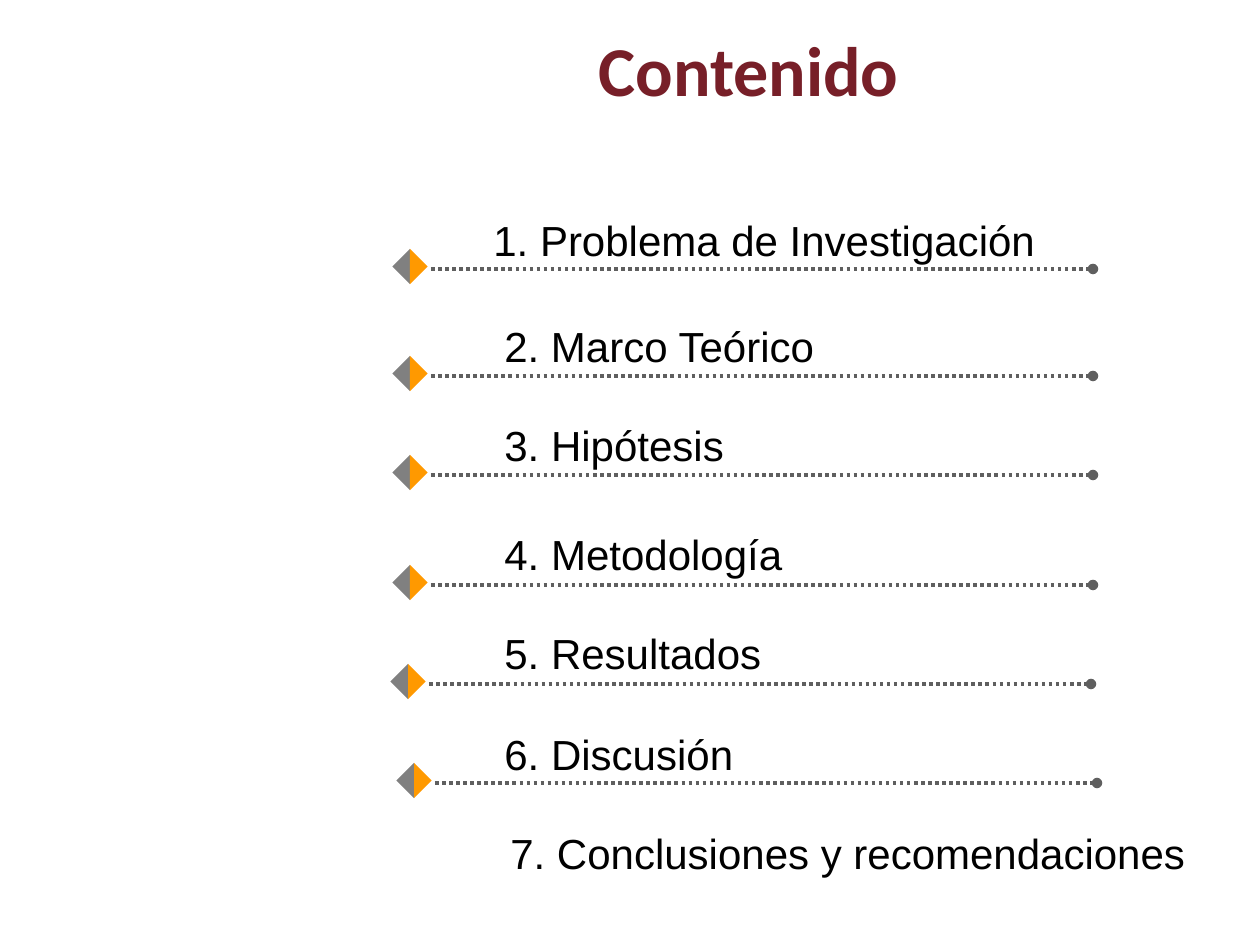
import pptx
import pptx.util
import pptx.dml.color
import pptx.enum.dml
import pptx.enum.shapes
import pptx.enum.text
import pptx.oxml.ns
from lxml import etree

RGB = pptx.dml.color.RGBColor
WINE = RGB(0x77, 0x1F, 0x28)
BLACK = RGB(0x00, 0x00, 0x00)
SLATE = RGB(0x5F, 0x5F, 0x5F)
GRAY = RGB(0x80, 0x80, 0x80)
ORANGE = RGB(0xFF, 0x99, 0x00)
ALIGN = pptx.enum.text.PP_ALIGN
KIND = pptx.enum.shapes.MSO_SHAPE.RIGHT_TRIANGLE
STRAIGHT = pptx.enum.shapes.MSO_CONNECTOR.STRAIGHT


def px(n):
    return round(n * 914400 / 126)


def write(text, x, y, w, h, font="Arial", size=24, color=BLACK, bold=False, align=ALIGN.LEFT):
    box = slide.shapes.add_textbox(px(x), px(y), px(w), px(h))
    box.text_frame.word_wrap = True
    para = box.text_frame.paragraphs[0]
    para.alignment = align
    run = para.add_run()
    run.text = text
    run.font.name = font
    run.font.size = pptx.util.Pt(size)
    run.font.bold = bold
    run.font.color.rgb = color


deck = pptx.Presentation()
deck.slide_width, deck.slide_height = px(1260), px(945)
slide = deck.slides.add_slide(deck.slide_layouts[6])

# Title
write("Contenido", 276, 20, 945, 91, font="Calibri", size=40, color=WINE, bold=True, align=ALIGN.CENTER)

# Dotted rules, each led by a two-tone diamond: (diamond centre, rule height)
SIDE = 25
for mid, y in [(410, 269), (410, 376), (410, 475), (410, 585), (408, 684), (414, 783)]:
    rule = slide.shapes.add_connector(STRAIGHT, px(mid + 21), px(y), px(mid + 683), px(y))
    rule.line.color.rgb = SLATE
    rule.line.width = pptx.util.Pt(2)
    rule.line.dash_style = pptx.enum.dml.MSO_LINE.ROUND_DOT
    tail = etree.SubElement(rule.line._get_or_add_ln(), pptx.oxml.ns.qn("a:tailEnd"))
    tail.set("type", "oval")
    etree.SubElement(rule._element.spPr, pptx.oxml.ns.qn("a:effectLst"))

    for turn, color in [(45, GRAY), (225, ORANGE)]:
        half = slide.shapes.add_shape(KIND, px(mid - SIDE / 2), px(y - 15), px(SIDE), px(SIDE))
        half.rotation = turn
        half.fill.solid()
        half.fill.fore_color.rgb = color
        half.line.fill.background()
        half.shadow.inherit = False

# Topics
for text, x, y, w in [
    ("1. Problema de Investigación", 481, 208, 811),
    ("2. Marco Teórico", 492, 314, 338),
    ("3. Hipótesis", 492, 413, 247),
    ("4. Metodología", 492, 522, 306),
    ("5. Resultados", 492, 621, 296),
    ("6. Discusión", 492, 722, 296),
    ("7. Conclusiones y recomendaciones", 498, 821, 707),
]:
    write(text, x, y, w, 64)

deck.save("out.pptx")
